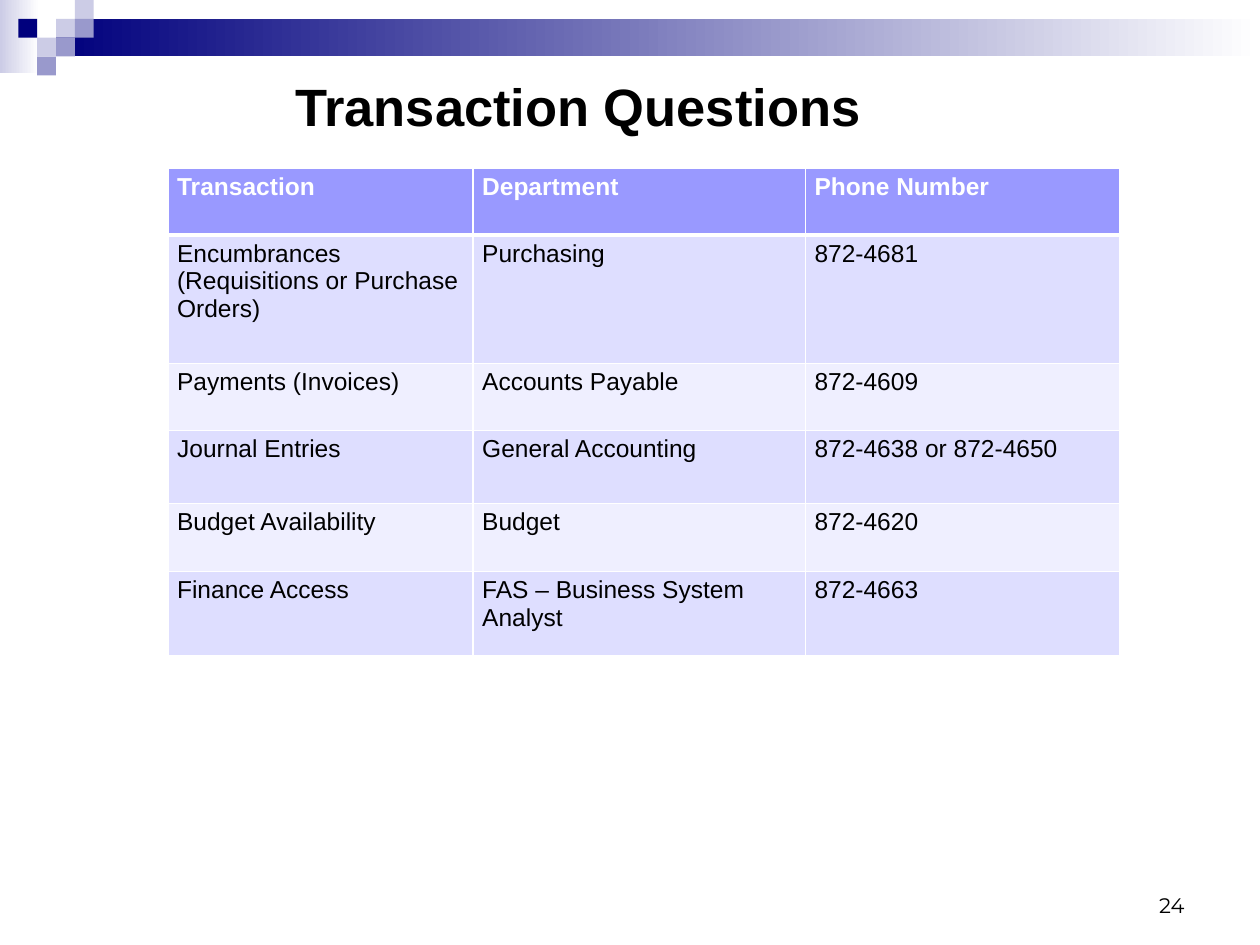
from pptx import Presentation
from pptx.dml.color import RGBColor
from pptx.enum.shapes import MSO_SHAPE
from pptx.enum.text import MSO_ANCHOR, PP_ALIGN
from pptx.oxml.ns import qn
from pptx.util import Cm, Pt
from lxml.etree import SubElement

ROWS = [
    ("Transaction", "Department", "Phone Number"),
    ("Encumbrances (Requisitions or Purchase Orders)", "Purchasing", "872-4681"),
    ("Payments (Invoices)", "Accounts Payable", "872-4609"),
    ("Journal Entries", "General Accounting", "872-4638 or 872-4650"),
    ("Budget Availability", "Budget", "872-4620"),
    ("Finance Access", "FAS – Business System Analyst", "872-4663"),
]
WIDTHS = (6.15, 6.7, 6.33)
HEIGHTS = (1.35, 2.59, 1.35, 1.47, 1.37, 1.7)
NAVY, PALE, MID = "00007D", "CCCCE6", "9999CC"
TILES = [(2, 1, PALE), (3, 0, PALE), (3, 1, MID), (1, 2, PALE),
         (0, 1, NAVY), (2, 2, MID), (1, 3, MID)]


def color(code):
    """Turn a hex string into a colour."""
    return RGBColor.from_string(code)


def write(frame, text, size=14, font="Arial", ink="000000", bold=False,
          align=PP_ALIGN.LEFT, space=None):
    """Put formatted text into a text frame."""
    frame.word_wrap = True
    para = frame.paragraphs[0]
    para.alignment = align
    para.line_spacing = space
    run = para.add_run()
    run.text = text
    run.font.size, run.font.name, run.font.bold = Pt(size), font, bold
    run.font.color.rgb = color(ink)


def label(slide, box, text, anchor, **style):
    """Add a text box with one line of text."""
    frame = slide.shapes.add_textbox(*map(Cm, box)).text_frame
    frame.vertical_anchor = anchor
    write(frame, text, **style)


def block(slide, box, *codes):
    """Add a rectangle in one colour or fading between two."""
    shape = slide.shapes.add_shape(MSO_SHAPE.RECTANGLE, *map(Cm, box))
    shape.shadow.inherit = False
    shape.line.fill.background()
    if len(codes) == 1:
        shape.fill.solid()
        shape.fill.fore_color.rgb = color(codes[0])
        return
    shape.fill.gradient()
    shape.fill.gradient_angle = 0
    for stop, code in zip(shape.fill.gradient_stops, codes):
        stop.color.rgb = color(code)


def banner(slide, box, unit=0.38):
    """Draw the fading bar and its corner tiles."""
    left, top, width, height = box
    block(slide, (left, top, 0.79, height), PALE, "FFFFFF")
    start = left + 0.37
    bar = start + 2 * unit
    block(slide, (bar, top + unit, left + width - bar, 2 * unit), NAVY, "FFFFFF")
    for col, row, code in TILES:
        block(slide, (start + col * unit, top + row * unit, unit, unit), code)


def border(cell, below):
    """Give a cell white edges, with its own weight below."""
    props = cell._tc.get_or_add_tcPr()
    for side, weight in zip("LRTB", (1, 1, 1, below)):
        line = SubElement(props, qn(f"a:ln{side}"), w=str(Pt(weight)))
        fill = SubElement(line, qn("a:solidFill"))
        SubElement(fill, qn("a:srgbClr"), val="FFFFFF")


def contacts(slide, box):
    """Build the table of departments and phone numbers."""
    table = slide.shapes.add_table(len(ROWS), len(WIDTHS), *map(Cm, box)).table
    for col, width in zip(table.columns, WIDTHS):
        col.width = Cm(width)
    for row, height in zip(table.rows, HEIGHTS):
        row.height = Cm(height)
    for i, texts in enumerate(ROWS):
        head = i == 0
        shade = "9999FF" if head else ("EFEFFF", "DEDEFF")[i % 2]
        for j, text in enumerate(texts):
            cell = table.cell(i, j)
            cell.margin_left = cell.margin_right = Cm(0.18)
            cell.margin_top = cell.margin_bottom = Cm(0.1)
            border(cell, 3 if head else 1)
            cell.fill.solid()
            cell.fill.fore_color.rgb = color(shade)
            write(cell.text_frame, text, bold=head,
                  ink="FFFFFF" if head else "000000")


def main():
    """Build and save the slide."""
    deck = Presentation()
    deck.slide_width, deck.slide_height = Cm(25.4), Cm(19.05)
    slide = deck.slides.add_slide(deck.slide_layouts[6])
    banner(slide, (0, 0, 25.4, 1.47))
    label(slide, (5.7, 1.47, 17.15, 1.47), "Transaction Questions",
          MSO_ANCHOR.MIDDLE, size=30, bold=True, space=0.9)
    contacts(slide, (3.39, 3.39, sum(WIDTHS), sum(HEIGHTS)))
    label(slide, (18.2, 17.35, 5.93, 1.27), "24", MSO_ANCHOR.BOTTOM,
          size=12, font="Montserrat", align=PP_ALIGN.RIGHT)
    deck.save("out.pptx")


if __name__ == "__main__":
    main()
